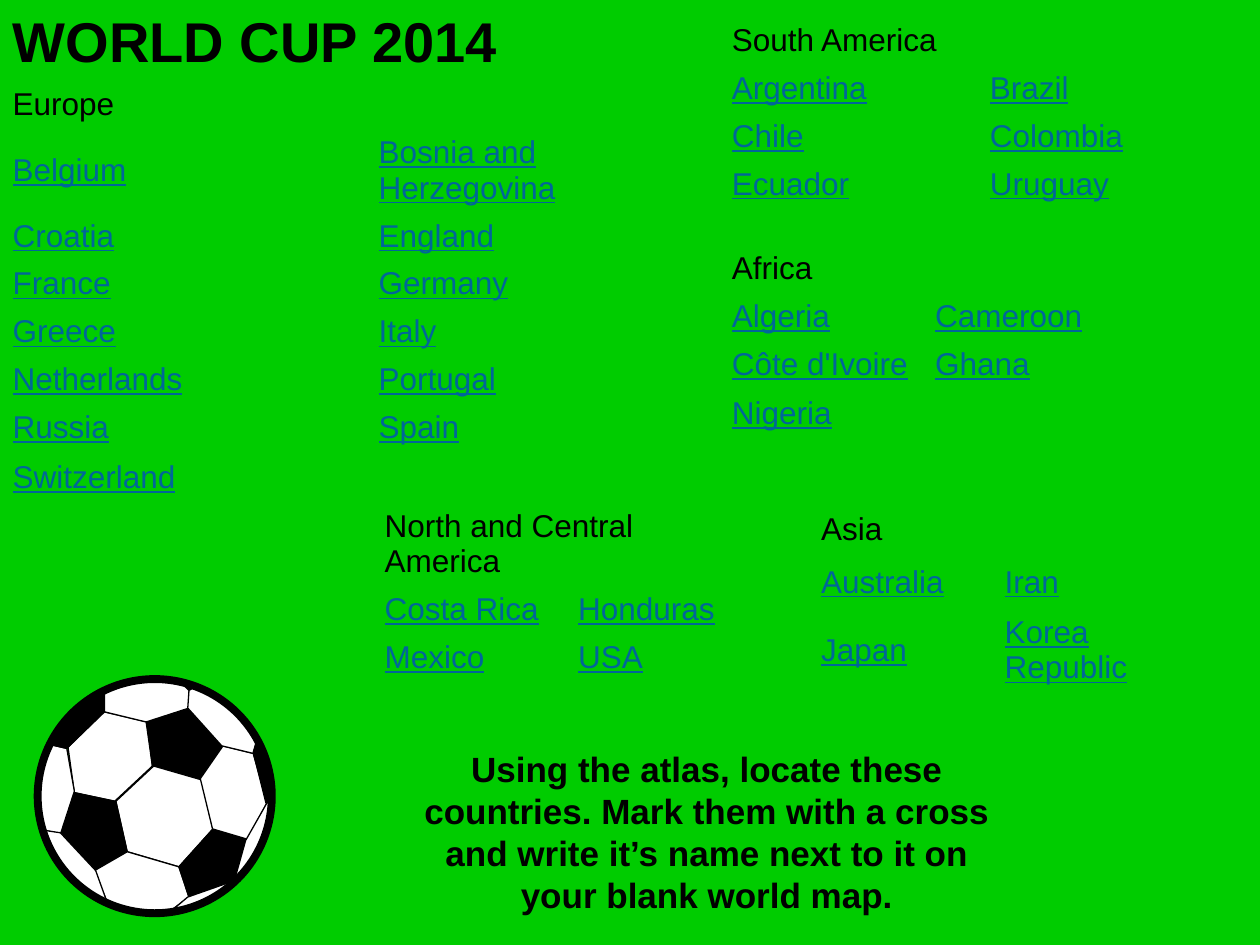
from lxml.etree import SubElement
from pptx import Presentation
from pptx.dml.color import RGBColor as Rgb
from pptx.enum.shapes import MSO_SHAPE as Kind
from pptx.enum.text import MSO_ANCHOR as Anchor, MSO_AUTO_SIZE as Fit, PP_ALIGN as Align
from pptx.oxml.ns import qn
from pptx.util import Cm, Pt

HUES = {"grass": "00CC00", "ink": "000000", "link": "006699", "white": "FFFFFF"}
ROW, TALL, ROOMY = 0.96, 1.68, 1.07
TITLE = "WORLD CUP 2014"
TASK = ("Using the atlas, locate these countries. Mark them with a cross "
        "and write it’s name next to it on your blank world map.")

REGIONS = [
    {"name": "Africa", "at": (14.5, 4.93), "col": 4.1, "rows": [ROW] * 4,
     "teams": ["Algeria", "Cameroon", "Côte d'Ivoire", "Ghana", "Nigeria"]},
    {"name": "Asia", "at": (16.3, 10.13), "col": 3.7, "rows": [ROOMY, ROOMY, TALL],
     "teams": ["Australia", "Iran", "Japan", "Korea Republic"]},
    {"name": "Europe", "at": (0, 1.63), "col": 7.38, "rows": [ROW, TALL] + [ROW] * 6,
     "teams": ["Belgium", "Bosnia and Herzegovina", "Croatia", "England",
               "France", "Germany", "Greece", "Italy", "Netherlands",
               "Portugal", "Russia", "Spain", "Switzerland"]},
    {"name": "North and Central America", "at": (7.5, 10.13), "col": 3.9,
     "rows": [TALL, ROW, ROW],
     "teams": ["Costa Rica", "Honduras", "Mexico", "USA"]},
    {"name": "South America", "at": (14.5, 0.33), "col": 5.2, "rows": [ROW] * 4,
     "teams": ["Argentina", "Brazil", "Chile", "Colombia", "Ecuador", "Uruguay"]},
]

UNIT = 0.0254
PATCHES = [
    ("ink", [(143, 541), (150, 548), (155, 545)]),
    ("white", [(42, 586), (37, 597), (43, 592)]),
    ("white", [(83, 565), (54, 593), (59, 629), (91, 636), (121, 608), (117, 573)]),
    ("ink", [(150, 562), (116, 573), (121, 608), (159, 619), (177, 592)]),
    ("white", [(122, 608), (92, 636), (101, 676), (142, 688), (169, 658), (160, 619)]),
    ("white", [(177, 592), (201, 598), (212, 637), (196, 668), (169, 659), (159, 618)]),
    ("ink", [(58, 629), (92, 636), (101, 676), (76, 691), (48, 661)]),
    ("white", [(101, 676), (75, 691), (85, 716), (100, 722), (120, 725),
               (135, 723), (150, 712), (142, 688)]),
    ("ink", [(169, 658), (142, 688), (150, 712), (186, 699), (193, 683), (196, 666)]),
    ("white", [(53, 594), (40, 591), (38, 597), (32, 613), (30, 633), (32, 651),
               (36, 659), (48, 662), (59, 628)]),
    ("white", [(35, 659), (48, 661), (76, 691), (85, 716), (74, 711), (55, 695),
               (44, 680), (38, 669)]),
    ("ink", [(83, 564), (83, 547), (66, 558), (48, 577), (44, 584), (40, 591), (53, 594)]),
    ("white", [(83, 548), (96, 543), (110, 539), (127, 539), (144, 542),
               (150, 548), (150, 562), (116, 573), (83, 565)]),
    ("white", [(150, 548), (149, 562), (176, 592), (201, 598), (204, 587),
               (196, 575), (183, 561), (165, 549), (155, 545)]),
    ("ink", [(204, 587), (201, 597), (211, 637), (216, 639), (215, 625),
             (212, 609), (206, 591)]),
    ("white", [(215, 638), (212, 637), (195, 667), (186, 699), (189, 696),
               (192, 693), (203, 679), (212, 659)]),
    ("white", [(136, 723), (149, 712), (186, 699), (179, 705), (167, 713), (149, 720)]),
]


def hue(key):
    return Rgb.from_string(HUES[key])


def put(frame, text, size=18, tint="ink", bold=False, line=False, align=Align.LEFT):
    """Write one formatted run into a text frame."""
    para = frame.paragraphs[0]
    para.alignment = align
    run = para.add_run()
    run.text = text
    font = run.font
    font.name, font.size = "Arial", Pt(size)
    font.bold, font.underline = bold, line
    font.color.rgb = hue(tint)


def place(shape, left, top, width, height):
    shape.left, shape.top = Cm(left), Cm(top)
    shape.width, shape.height = Cm(width), Cm(height)


def clear(cell):
    cell.vertical_anchor = Anchor.MIDDLE
    props = cell._tc.get_or_add_tcPr()
    for side in ("lnL", "lnR", "lnT", "lnB"):
        edge = SubElement(props, qn("a:" + side), w="0")
        SubElement(edge, qn("a:noFill"))
    cell.fill.background()


def draw_ball(slide):
    group = slide.shapes.add_group_shape()
    for tint, points in PATCHES:
        pen = group.shapes.build_freeform(*points[0], scale=Cm(UNIT))
        pen.add_line_segments(points[1:], close=True)
        patch = pen.convert_to_shape()
        patch.fill.solid()
        patch.fill.fore_color.rgb = hue(tint)
        patch.line.width = Pt(0.75)
        patch.line.color.rgb = hue("ink")
        patch.shadow.inherit = False
    rim = group.shapes.add_shape(Kind.OVAL, Cm(0.76), Cm(13.69), Cm(4.72), Cm(4.72))
    rim.fill.background()
    rim.line.width = Pt(4.5)
    rim.line.color.rgb = hue("ink")
    rim.shadow.inherit = False


def add_region(slide, name, at, col, rows, teams):
    left, top = map(Cm, at)
    table = slide.shapes.add_table(
        len(rows), 2, left, top, Cm(2 * col), Cm(sum(rows))).table
    table.first_row = table.horz_banding = False
    for column in table.columns:
        column.width = Cm(col)
    for row, tall in zip(table.rows, rows):
        row.height = Cm(tall)
    for cell in table.iter_cells():
        clear(cell)
    head = table.cell(0, 0)
    head.merge(table.cell(0, 1))
    put(head.text_frame, name)
    for spot, team in enumerate(teams):
        cell = table.cell(1 + spot // 2, spot % 2)
        put(cell.text_frame, team, tint="link", line=True)


def main():
    deck = Presentation()
    deck.slide_width, deck.slide_height = Cm(25.4), Cm(19.05)
    slide = deck.slides.add_slide(deck.slide_layouts[5])
    slide.background.fill.solid()
    slide.background.fill.fore_color.rgb = hue("grass")

    draw_ball(slide)
    for region in REGIONS:
        add_region(slide, **region)

    title = slide.shapes.title
    place(title, 0, 0, 10.4, 1.63)
    frame = title.text_frame
    frame.auto_size, frame.word_wrap = Fit.NONE, False
    frame.vertical_anchor = Anchor.TOP
    put(frame, TITLE, size=32, bold=True)

    task = slide.shapes.add_textbox(0, 0, 0, 0)
    place(task, 7.9, 14.94, 12.7, 3.68)
    task.text_frame.word_wrap = True
    put(task.text_frame, TASK, size=20, bold=True, align=Align.CENTER)
    deck.save("out.pptx")


if __name__ == "__main__":
    main()
